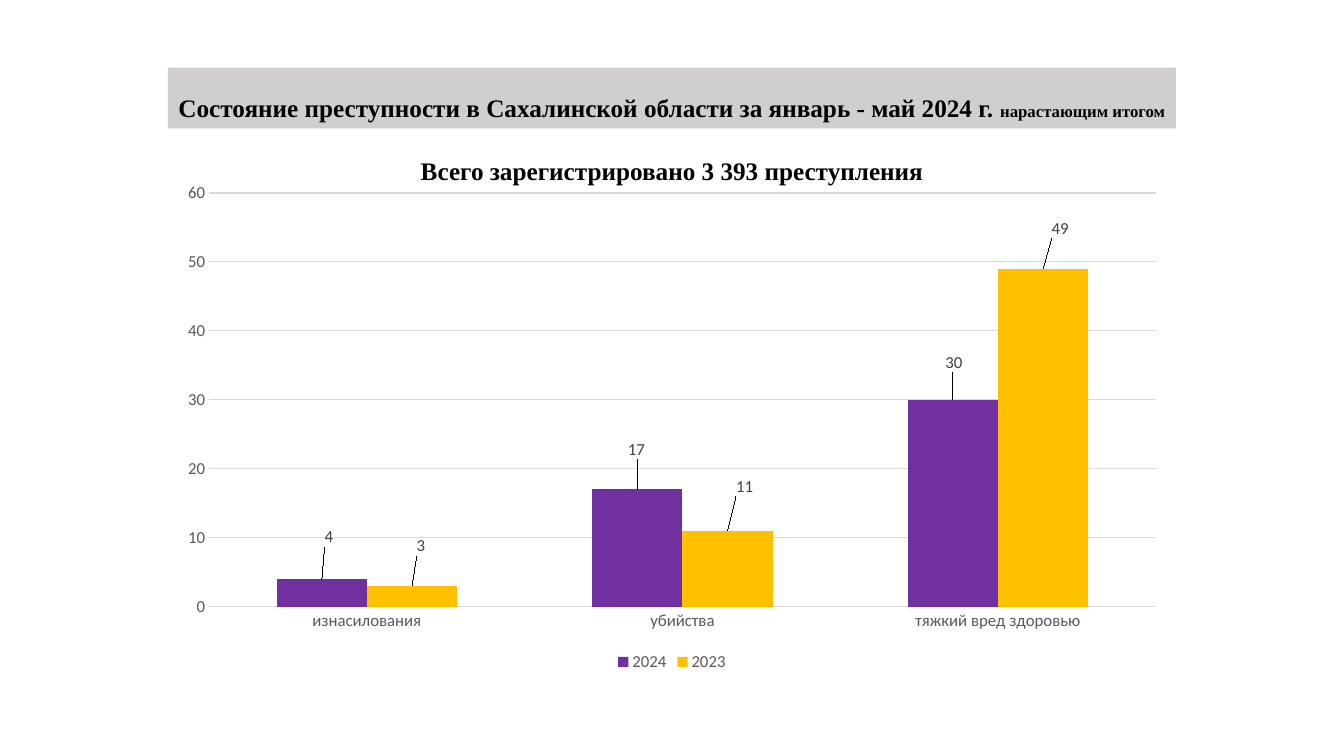
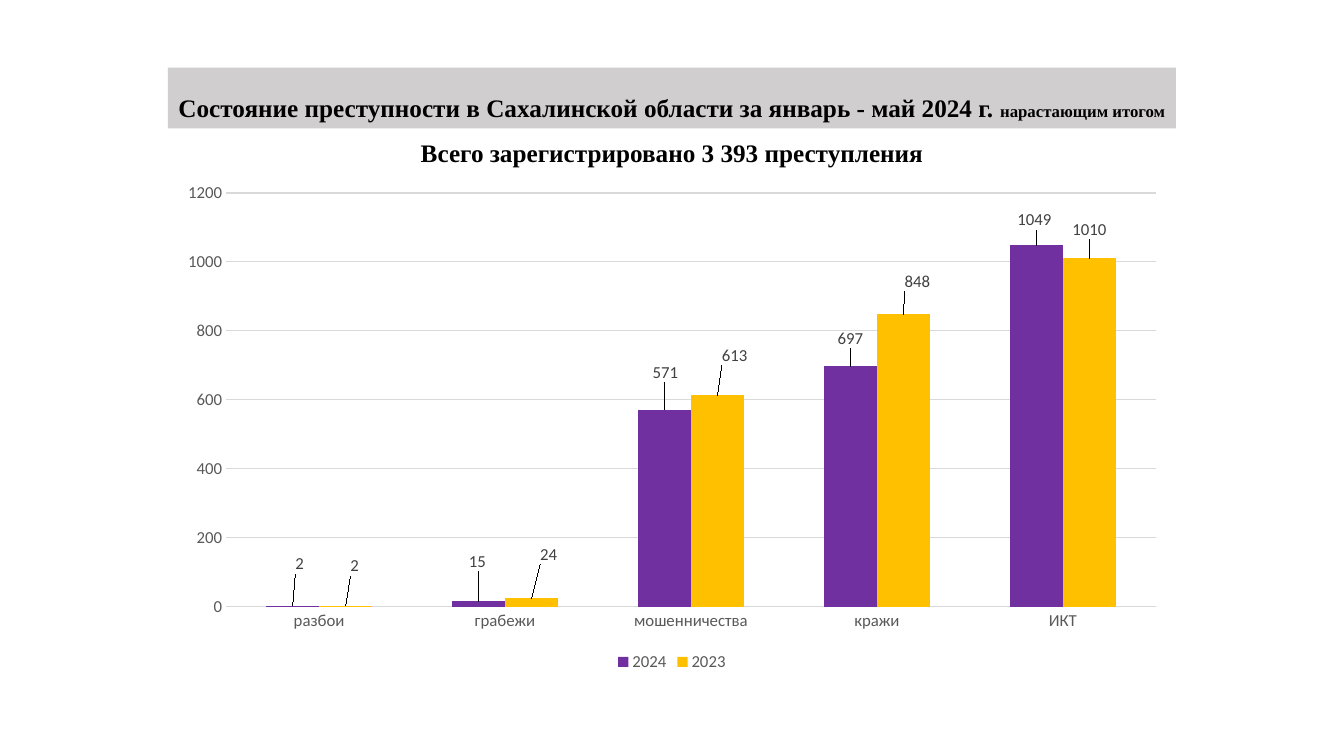
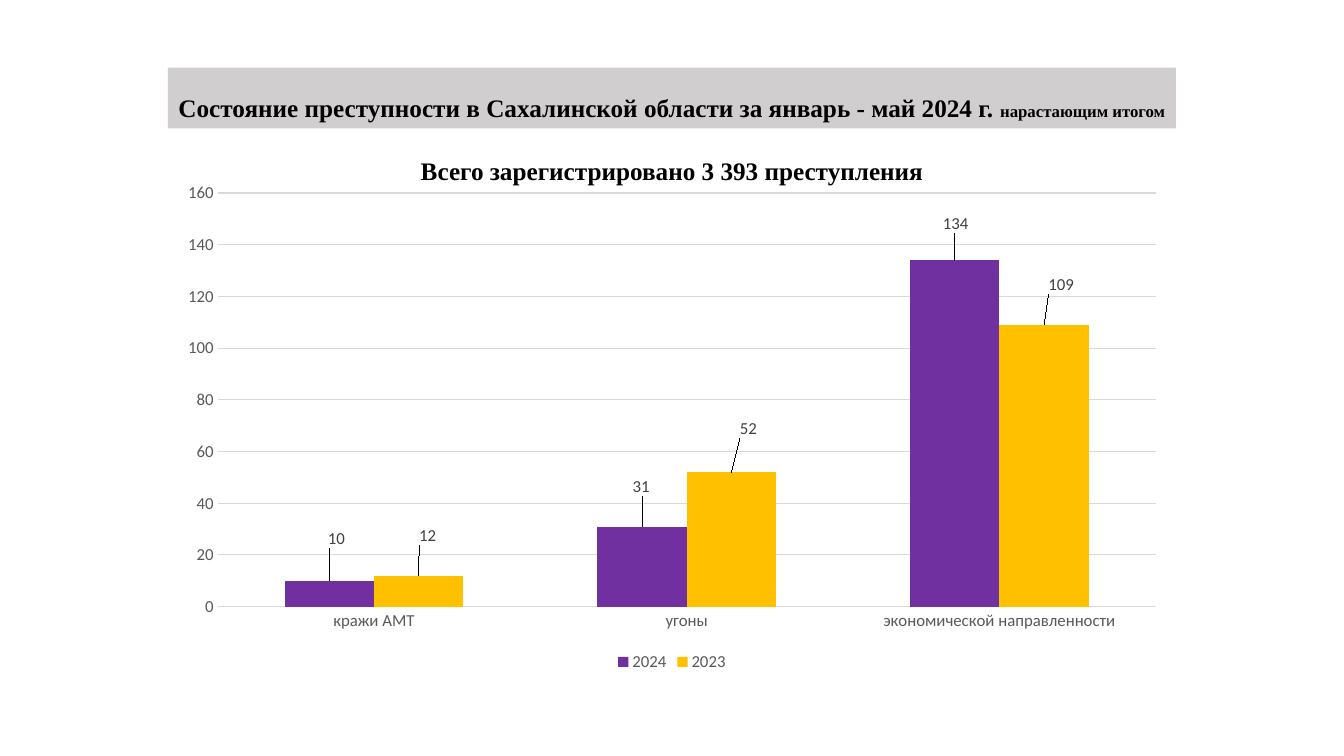
import pptx
import pptx.util
import pptx.oxml
import pptx.oxml.ns
import pptx.chart.data
import pptx.dml.color
import pptx.enum.chart
import pptx.enum.text

COLORS = {
    "band": "D0CECE",
    "ink": "000000",
    "axis": "595959",
    "label": "404040",
    "grid": "D9D9D9",
    "2024": "7030A0",
    "2023": "FFC000",
}
SCALE = 914400 / 100.8  # EMU in one px
LEFT, WIDE = 168, 1008
CHART_TOP, CHART_HIGH = 173, 503

HEAD = "Состояние преступности в Сахалинской области за январь - май 2024 г. "
NOTE = "нарастающим итогом"
TOTAL = "Всего зарегистрировано 3 393 преступления"

# Label shifts in px, by category, the same on every chart
SHIFTS = {
    "2024": [(7, -28), (-1, -26), (1, -23), (0, -14), (-2, -11)],
    "2023": [(9, -26), (17, -30), (17, -26), (14, -19), (0, -15)],
}

# Top of the total line, categories, values by year
SLIDES = [
    (156, ["изнасилования", "убийства", "тяжкий вред здоровью"],
     {"2024": [4, 17, 30], "2023": [3, 11, 49]}),
    (138, ["разбои", "грабежи", "мошенничества", "кражи", "ИКТ"],
     {"2024": [2, 15, 571, 697, 1049], "2023": [2, 24, 613, 848, 1010]}),
    (156, ["кражи АМТ", "угоны", "экономической направленности"],
     {"2024": [10, 31, 134], "2023": [12, 52, 109]}),
]


def px(size):
    return pptx.util.Emu(round(size * SCALE))


def color(name):
    return pptx.dml.color.RGBColor.from_string(COLORS[name])


class Deck:
    def __init__(self):
        self.prs = pptx.Presentation()
        self.prs.slide_width, self.prs.slide_height = px(1344), px(756)
        self.slide = None

    def add(self):
        self.slide = self.prs.slides.add_slide(self.prs.slide_layouts[0])

    def font(self, font, size, ink, name="Calibri", bold=False):
        font.size, font.name, font.bold = pptx.util.Pt(size), name, bold
        font.color.rgb = color(ink)

    def place(self, shape, top, high, anchor, space):
        """Move a placeholder and return its formatted first paragraph."""
        shape.left, shape.top = px(LEFT), px(top)
        shape.width, shape.height = px(WIDE), px(high)
        frame = shape.text_frame
        frame.word_wrap = True
        frame.auto_size = pptx.enum.text.MSO_AUTO_SIZE.NONE
        frame.vertical_anchor = anchor
        para = frame.paragraphs[0]
        para.alignment = pptx.enum.text.PP_ALIGN.CENTER
        para.line_spacing = space
        self.font(para.font, 18, "ink", "Times New Roman", True)
        return para

    def title(self):
        shape = self.slide.shapes.title
        shape.fill.solid()
        shape.fill.fore_color.rgb = color("band")
        para = self.place(shape, 67.5, 61, pptx.enum.text.MSO_ANCHOR.BOTTOM, 0.9)
        for text, size in ((HEAD, 18), (NOTE, 12)):
            run = para.add_run()
            run.text = text
            run.font.size = pptx.util.Pt(size)

    def total(self, top):
        para = self.place(self.slide.placeholders[1], top, 36,
                          pptx.enum.text.MSO_ANCHOR.TOP, 0.8)
        para.space_before = pptx.util.Pt(10)
        para.add_run().text = TOTAL

    def chart(self, cats, rows):
        data = pptx.chart.data.CategoryChartData()
        data.categories = cats
        for year, vals in rows.items():
            data.add_series(year, vals)
        chart = self.slide.shapes.add_chart(
            pptx.enum.chart.XL_CHART_TYPE.COLUMN_CLUSTERED,
            px(LEFT), px(CHART_TOP), px(WIDE), px(CHART_HIGH), data).chart
        chart.has_title = False
        self.font(chart.font, 10, "ink")

        # Legend
        chart.has_legend = True
        chart.legend.position = pptx.enum.chart.XL_LEGEND_POSITION.BOTTOM
        chart.legend.include_in_layout = False
        self.font(chart.legend.font, 12, "axis")

        # Axes and grid
        for axis in (chart.category_axis, chart.value_axis):
            axis.major_tick_mark = pptx.enum.chart.XL_TICK_MARK.NONE
            axis.minor_tick_mark = pptx.enum.chart.XL_TICK_MARK.NONE
            axis.format.line.fill.background()
            self.font(axis.tick_labels.font, 12, "axis")
        grid = chart.value_axis.major_gridlines.format.line
        grid.width = pptx.util.Pt(0.75)
        grid.color.rgb = color("grid")

        # Columns
        plot = chart.plots[0]
        plot.gap_width, plot.overlap = 150, 0
        plot.vary_by_categories = False
        for row in plot.series:
            row.format.fill.solid()
            row.format.fill.fore_color.rgb = color(row.name)
            row.data_labels.show_value = True
            self.font(row.data_labels.font, 12, "label")
        self.labels(chart, plot, len(cats))

    def labels(self, chart, plot, count):
        """Give each point its own label, moved off its column."""
        shifts = []
        for row in plot.series:
            shifts += SHIFTS[row.name][:count]
            for i in range(count):
                label = row.points[i].data_label
                self.font(label.font, 12, "label")
                label.position = pptx.enum.chart.XL_LABEL_POSITION.OUTSIDE_END
        for node, (dx, dy) in zip(chart.element.xpath(".//c:dLbl"), shifts):
            node.insert(1, pptx.oxml.parse_xml(
                f'<c:layout {pptx.oxml.ns.nsdecls("c")}><c:manualLayout>'
                f'<c:x val="{dx / WIDE:.4f}"/><c:y val="{dy / CHART_HIGH:.4f}"/>'
                '</c:manualLayout></c:layout>'))


def main():
    deck = Deck()
    for top, cats, rows in SLIDES:
        deck.add()
        deck.title()
        deck.total(top)
        deck.chart(cats, rows)
    deck.prs.save("out.pptx")


if __name__ == "__main__":
    main()
